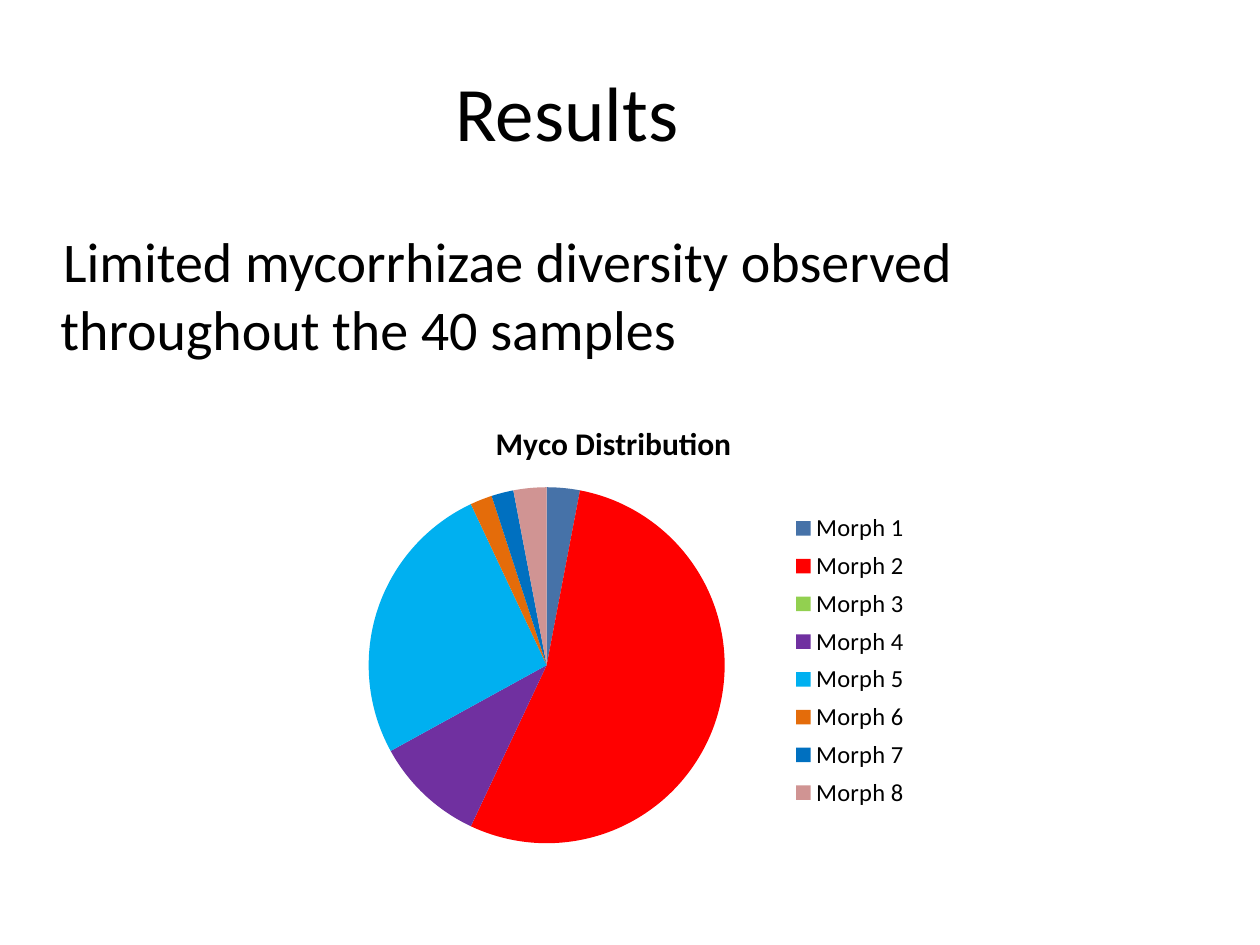
from lxml.etree import SubElement
from pptx import Presentation
from pptx.chart.data import CategoryChartData
from pptx.dml.color import RGBColor
from pptx.enum.chart import XL_CHART_TYPE, XL_LEGEND_POSITION
from pptx.enum.text import MSO_ANCHOR, PP_ALIGN
from pptx.oxml import parse_xml
from pptx.oxml.ns import nsdecls, qn
from pptx.util import Inches, Pt

TITLE = "Results"
FINDING = "Limited mycorrhizae diversity observed throughout the 40 samples"
CHART_TITLE = "Myco Distribution"
MORPHS = [
    ("Morph 1", 3, "4672A8"),
    ("Morph 2", 54, "FF0000"),
    ("Morph 3", 0, "92D050"),
    ("Morph 4", 10, "7030A0"),
    ("Morph 5", 26, "00B0F0"),
    ("Morph 6", 2, "E46C0A"),
    ("Morph 7", 2, "0070C0"),
    ("Morph 8", 3, "D09493"),
]
THEME = {
    "font": "Calibri",
    "text": "000000",
    "title": 44,
    "body": 32,
    "chart_title": 18,
    "legend": 14,
}
PLACES = {
    "title": (0, 0.25, 9, 1.25),
    "body": (0, 1.75, 9, 4.95),
    "chart": (1.33, 3.17, 7.08, 3.67),
}
PIE_AREA = (0.22, 0.19, 0.41, 0.77)
LEGEND_AREA = (0.7, 0.23, 0.13, 0.67)


def style_font(font, size, bold=False):
    font.name = THEME["font"]
    font.size = Pt(THEME[size])
    font.bold = bold
    font.color.rgb = RGBColor.from_string(THEME["text"])


def fill_placeholder(box, role, text):
    box.left, box.top, box.width, box.height = map(Inches, PLACES[role])
    para = box.text_frame.paragraphs[0]
    span = para.add_run()
    span.text = text
    style_font(span.font, role)
    return para


def manual_layout(area, inner=False):
    layout = parse_xml(f"<c:layout {nsdecls('c')}><c:manualLayout/></c:layout>")
    settings = [("layoutTarget", "inner")] if inner else []
    settings += [("xMode", "edge"), ("yMode", "edge")]
    settings += zip("xywh", area)
    for name, value in settings:
        SubElement(layout[0], qn(f"c:{name}")).set("val", str(value))
    return layout


def remove_layout(element):
    for old in element.findall(qn("c:layout")):
        element.remove(old)


def add_pie(page):
    data = CategoryChartData()
    data.categories = [name for name, _, _ in MORPHS]
    data.add_series("Series 1", [share for _, share, _ in MORPHS])
    chart = page.shapes.add_chart(
        XL_CHART_TYPE.PIE, *map(Inches, PLACES["chart"]), data
    ).chart
    style_font(chart.font, "legend")

    chart.has_title = True
    span = chart.chart_title.text_frame.paragraphs[0].add_run()
    span.text = CHART_TITLE
    style_font(span.font, "chart_title", bold=True)

    chart.has_legend = True
    legend = chart.legend
    legend.position = XL_LEGEND_POSITION.RIGHT
    legend.include_in_layout = False
    style_font(legend.font, "legend")

    plot = chart.plots[0]
    plot.vary_by_categories = True
    for index, (_, _, color) in enumerate(MORPHS):
        fill = plot.series[0].points[index].format.fill
        fill.solid()
        fill.fore_color.rgb = RGBColor.from_string(color)

    root = chart.element
    plot_area = root.find(".//" + qn("c:plotArea"))
    remove_layout(plot_area)
    plot_area.insert(0, manual_layout(PIE_AREA, inner=True))
    legend_element = root.find(".//" + qn("c:legend"))
    remove_layout(legend_element)
    legend_element.find(qn("c:legendPos")).addnext(manual_layout(LEGEND_AREA))


def main():
    deck = Presentation()
    deck.slide_width, deck.slide_height = Inches(10), Inches(7.5)
    page = deck.slides.add_slide(deck.slide_layouts[1])

    heading = page.shapes.title
    para = fill_placeholder(heading, "title", TITLE)
    para.alignment = PP_ALIGN.CENTER
    heading.text_frame.vertical_anchor = MSO_ANCHOR.MIDDLE

    para = fill_placeholder(page.placeholders[1], "body", FINDING)
    properties = para._p.get_or_add_pPr()
    properties.set("marL", str(Inches(0.38)))
    properties.set("indent", str(Inches(0.02)))
    SubElement(properties, qn("a:buNone"))

    add_pie(page)
    deck.save("out.pptx")


if __name__ == "__main__":
    main()
